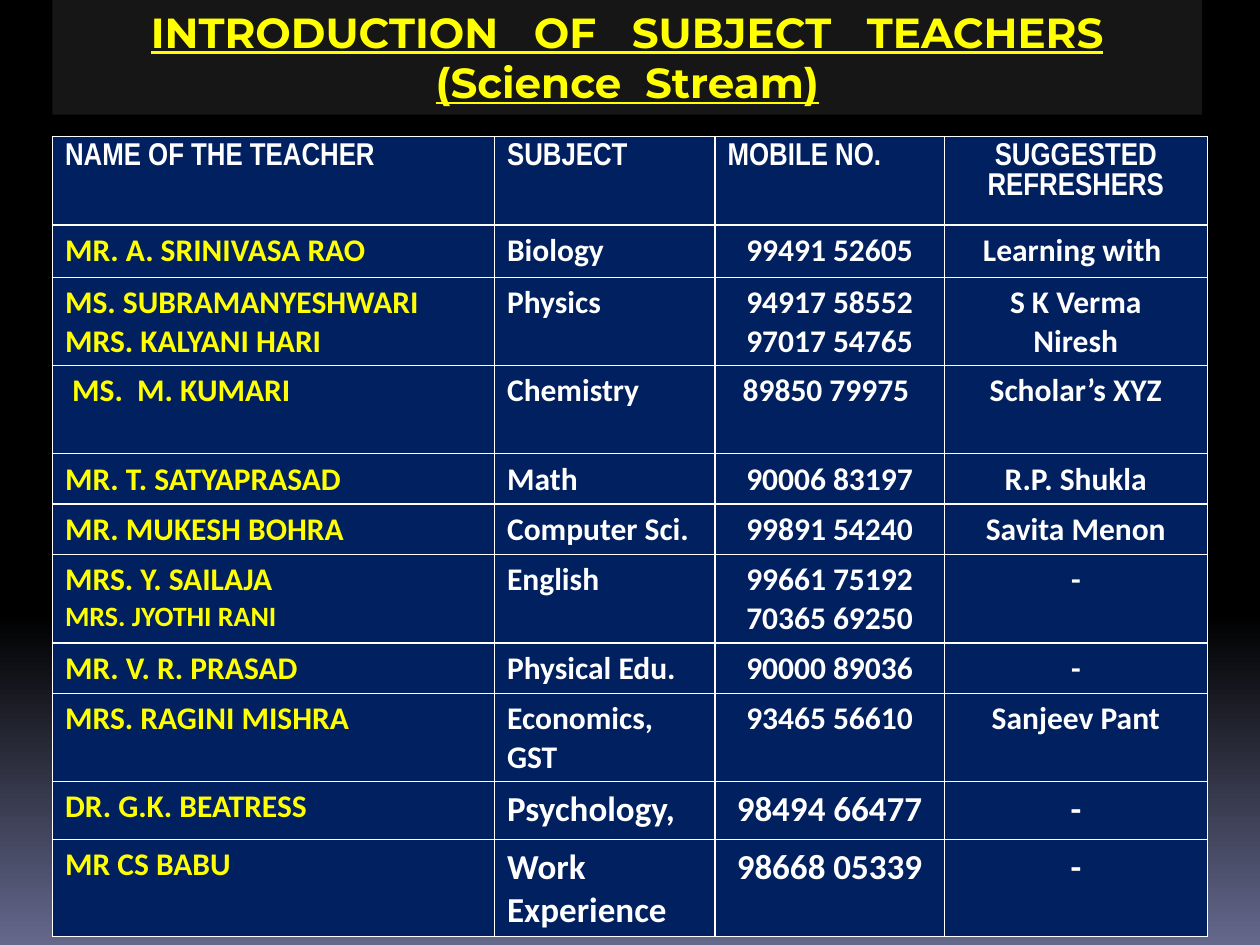
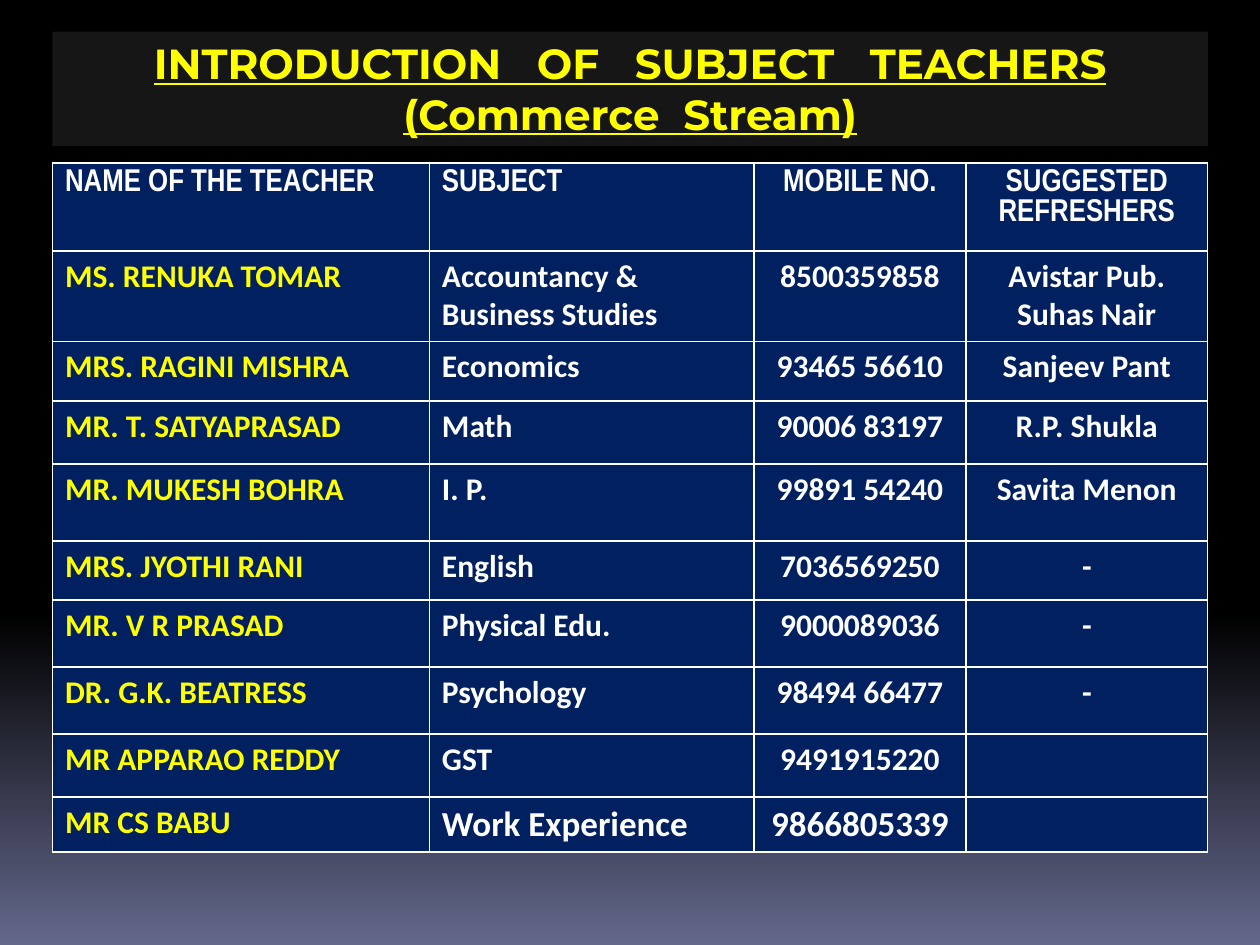
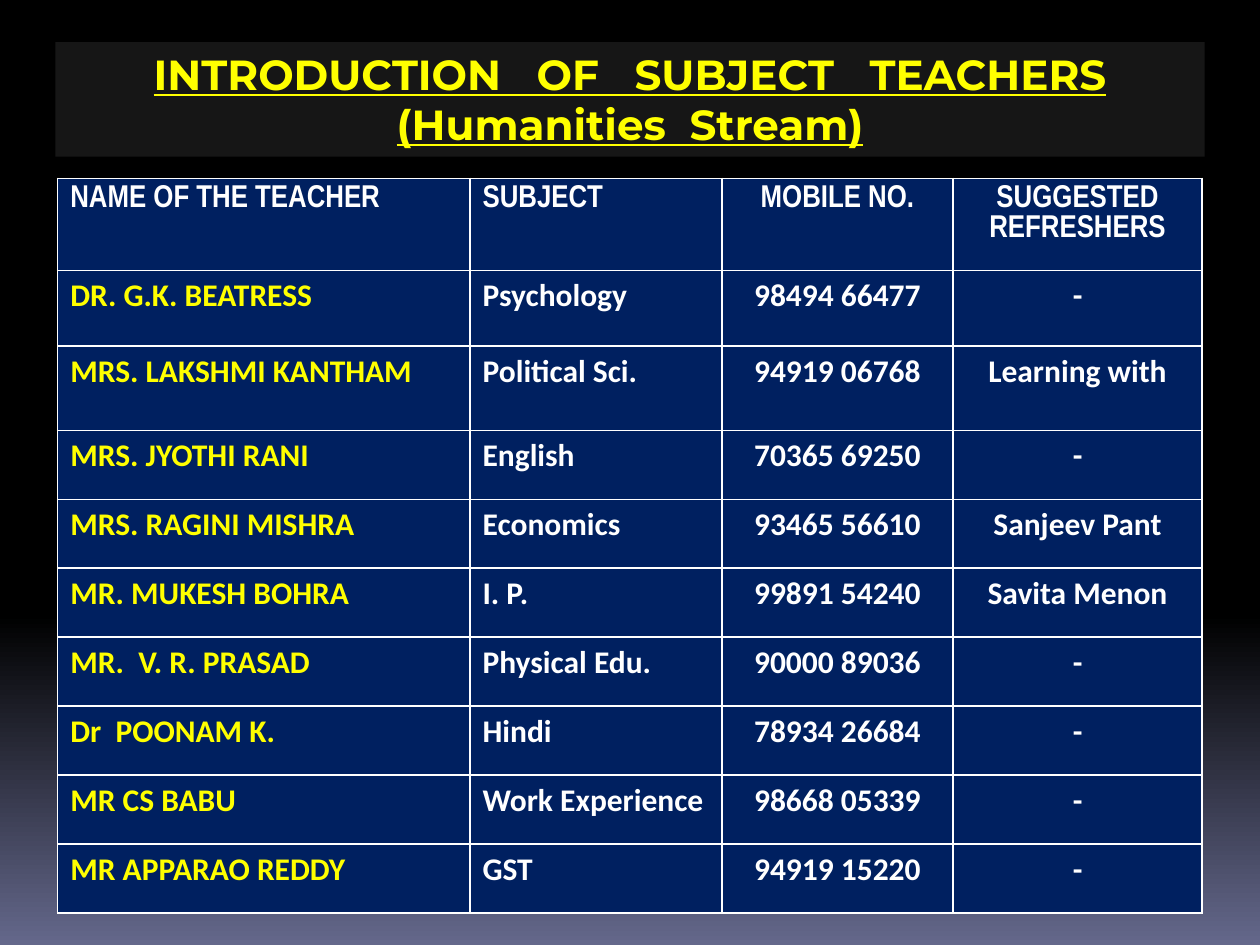
from copy import deepcopy
from dataclasses import dataclass

from pptx import Presentation
from pptx.dml.color import RGBColor
from pptx.enum.text import MSO_ANCHOR, MSO_AUTO_SIZE, PP_ALIGN as Align
from pptx.oxml import parse_xml
from pptx.oxml.ns import nsdecls, qn
from pptx.util import Pt

# Shared colours, fonts and sizes
BLACK = RGBColor(0x00, 0x00, 0x00)
DUSK = RGBColor(0x64, 0x68, 0x8B)
BAND = RGBColor(0x16, 0x16, 0x16)
NAVY = RGBColor(0x00, 0x20, 0x60)
YELLOW = RGBColor(0xFF, 0xFF, 0x00)
WHITE = RGBColor(0xFF, 0xFF, 0xFF)

TITLE_FONT, HEAD_FONT, BODY_FONT = "Montserrat", "Arial Narrow", "Calibri"
TITLE_LINE = "INTRODUCTION   OF   SUBJECT   TEACHERS"
HEADINGS = ("NAME OF THE TEACHER", "SUBJECT", "MOBILE NO.", "SUGGESTED REFRESHERS")
COLUMN_ALIGN = (Align.LEFT, Align.LEFT, Align.CENTER, Align.CENTER)
TITLE_HEIGHT = 65.5
BORDER_WIDTH = 1
BACKDROP = ((0, BLACK), (0.65, BLACK), (1, DUSK))

# Refreshers suggested in more than one stream
MATH_BOOK = "R.P. Shukla"
COMPUTER_BOOK = "Savita Menon"
ECONOMICS_BOOK = "Sanjeev Pant"


@dataclass(frozen=True)
class Teacher:
    height: float
    name: str
    subject: str
    mobile: str
    refresher: str
    size: float = 18          # subject and mobile text
    second_size: float = 18   # second name in the cell


@dataclass(frozen=True)
class Stream:
    subtitle: str
    title_box: tuple[float, float, float]   # left, top, width
    table_at: tuple[float, float]           # left, top
    widths: tuple[float, ...]
    head_height: float
    teachers: tuple[Teacher, ...]
    mobile_head: Align = Align.CENTER


STREAMS = (
    Stream(
        "(Science  Stream)", (30, 0, 656.8), (30, 78),
        (252.6, 126, 131, 150.4), 50.4,
        (
            Teacher(30, "MR. A. SRINIVASA RAO", "Biology", "99491 52605", "Learning with "),
            Teacher(50.4, "MS. SUBRAMANYESHWARI\nMRS. KALYANI HARI", "Physics",
                    "94917 58552\n97017 54765", "S K Verma\nNiresh"),
            Teacher(50.4, " MS.  M. KUMARI", "Chemistry", "89850 79975 ", "Scholar’s XYZ"),
            Teacher(28.8, "MR. T. SATYAPRASAD", "Math", "90006 83197", MATH_BOOK),
            Teacher(28.8, "MR. MUKESH BOHRA", "Computer Sci.", "99891 54240", COMPUTER_BOOK),
            Teacher(50.2, "MRS. Y. SAILAJA\nMRS. JYOTHI RANI", "English",
                    "99661 75192\n70365 69250", "-", second_size=16),
            Teacher(28.8, "MR. V. R. PRASAD", "Physical Edu.", "90000 89036", "-"),
            Teacher(50.4, "MRS. RAGINI MISHRA", "Economics, GST", "93465 56610",
                    ECONOMICS_BOOK),
            Teacher(33.2, "DR. G.K. BEATRESS", "Psychology,", "98494 66477", "-", size=20),
            Teacher(55.4, "MR CS BABU", "Work Experience", "98668 05339", "-", size=20),
        ),
        mobile_head=Align.LEFT,
    ),
    Stream(
        "(Commerce  Stream)", (30, 18, 660.2), (30, 93),
        (215.4, 185.6, 121, 138.2), 50.4,
        (
            Teacher(51.8, "MS. RENUKA TOMAR", "Accountancy & Business Studies",
                    "8500359858", "Avistar Pub.\nSuhas Nair"),
            Teacher(33.8, "MRS. RAGINI MISHRA", "Economics", "93465 56610", ECONOMICS_BOOK),
            Teacher(36, "MR. T. SATYAPRASAD", "Math", "90006 83197", MATH_BOOK),
            Teacher(44, "MR. MUKESH BOHRA", "I. P.", "99891 54240", COMPUTER_BOOK),
            Teacher(33.8, "MRS. JYOTHI RANI", "English", "7036569250", "-"),
            Teacher(38.4, "MR. V R PRASAD", "Physical Edu.", "9000089036", "-"),
            Teacher(38.4, "DR. G.K. BEATRESS", "Psychology", "98494 66477", "-"),
            Teacher(36, "MR APPARAO REDDY", "GST", "9491915220", ""),
            Teacher(31, "MR CS BABU", "Work Experience", "9866805339", "", size=20),
        ),
    ),
    Stream(
        "(Humanities  Stream)", (31.6, 24, 656.8), (33, 102),
        (235.6, 144, 132, 142.4), 52.6,
        (
            Teacher(43.2, "DR. G.K. BEATRESS", "Psychology", "98494 66477", "-"),
            Teacher(48.2, "MRS. LAKSHMI KANTHAM", "Political Sci.", "94919 06768",
                    "Learning with"),
            Teacher(39.4, "MRS. JYOTHI RANI", "English", "70365 69250", "-"),
            Teacher(39.4, "MRS. RAGINI MISHRA", "Economics", "93465 56610", ECONOMICS_BOOK),
            Teacher(39.4, "MR. MUKESH BOHRA", "I. P.", "99891 54240", COMPUTER_BOOK),
            Teacher(39.4, "MR.  V. R. PRASAD", "Physical Edu.", "90000 89036", "-"),
            Teacher(39.4, "Dr  POONAM K.", "Hindi", "78934 26684", "-"),
            Teacher(39.4, "MR CS BABU", "Work Experience", "98668 05339", "-"),
            Teacher(39.4, "MR APPARAO REDDY", "GST", "94919 15220", "-"),
        ),
    ),
)


def set_attrs(target, values: dict) -> None:
    for name, value in values.items():
        setattr(target, name, value)


def style_text(p, font: str, size: float, color: RGBColor, align: Align, **extra) -> None:
    p.alignment = align
    for r in p.runs:
        set_attrs(r.font, {"name": font, "size": Pt(size), "bold": True, **extra})
        r.font.color.rgb = color


def paint_backdrop(master) -> None:
    """Give the master a vertical gradient with three stops."""
    fill = master.background.fill
    fill.gradient()
    fill.gradient_angle = 270
    stops = master.element.find(".//" + qn("a:gsLst"))
    stops.append(deepcopy(stops[-1]))
    for stop, (position, color) in zip(fill.gradient_stops, BACKDROP):
        stop.position = position
        stop.color.rgb = color


def draw_title(s, stream: Stream) -> None:
    sp = s.shapes.title
    left, top, width = stream.title_box
    set_attrs(sp, {"left": Pt(left), "top": Pt(top),
                   "width": Pt(width), "height": Pt(TITLE_HEIGHT)})
    sp.fill.solid()
    sp.fill.fore_color.rgb = BAND
    tf = sp.text_frame
    tf.text = f"{TITLE_LINE}\n{stream.subtitle}"
    set_attrs(tf, {"word_wrap": True, "vertical_anchor": MSO_ANCHOR.TOP,
                   "auto_size": MSO_AUTO_SIZE.SHAPE_TO_FIT_TEXT})
    for p in tf.paragraphs:
        style_text(p, TITLE_FONT, 24, YELLOW, Align.CENTER, underline=True)


def draw_cell(cell, text: str) -> list:
    """Add borders, fill and text; return the paragraphs for styling."""
    tc_pr = cell._tc.get_or_add_tcPr()
    for side in "LRTB":
        tc_pr.append(parse_xml(
            f'<a:ln{side} {nsdecls("a")} w="{Pt(BORDER_WIDTH)}"><a:solidFill>'
            f'<a:srgbClr val="{WHITE}"/></a:solidFill></a:ln{side}>'))
    cell.fill.solid()
    cell.fill.fore_color.rgb = NAVY
    cell.text_frame.text = text
    return list(cell.text_frame.paragraphs)


def draw_table(s, stream: Stream) -> None:
    heights = [stream.head_height, *(t.height for t in stream.teachers)]
    left, top = stream.table_at
    table = s.shapes.add_table(
        len(heights), len(HEADINGS), Pt(left), Pt(top),
        Pt(sum(stream.widths)), Pt(sum(heights))).table
    set_attrs(table, {"first_row": False, "horz_banding": False})
    for column, width in zip(table.columns, stream.widths):
        column.width = Pt(width)
    for row, height in zip(table.rows, heights):
        row.height = Pt(height)

    # Heading row
    head_align = (*COLUMN_ALIGN[:2], stream.mobile_head, COLUMN_ALIGN[3])
    for col, (heading, align) in enumerate(zip(HEADINGS, head_align)):
        for p in draw_cell(table.cell(0, col), heading):
            style_text(p, HEAD_FONT, 18, WHITE, align)

    # Teacher rows
    for row, t in enumerate(stream.teachers, 1):
        texts = (t.name, t.subject, t.mobile, t.refresher)
        for col, (text, align) in enumerate(zip(texts, COLUMN_ALIGN)):
            sizes = (18, t.second_size) if col == 0 else (t.size, t.size)
            color = YELLOW if col == 0 else WHITE
            for p, size in zip(draw_cell(table.cell(row, col), text), sizes):
                style_text(p, BODY_FONT, size, color, align)


def main() -> None:
    prs = Presentation()
    set_attrs(prs, {"slide_width": Pt(720), "slide_height": Pt(540)})
    paint_backdrop(prs.slide_master)
    title_only = prs.slide_layouts.get_by_name("Title Only")
    for stream in STREAMS:
        s = prs.slides.add_slide(title_only)
        draw_title(s, stream)
        draw_table(s, stream)
    prs.save("out.pptx")


if __name__ == "__main__":
    main()
